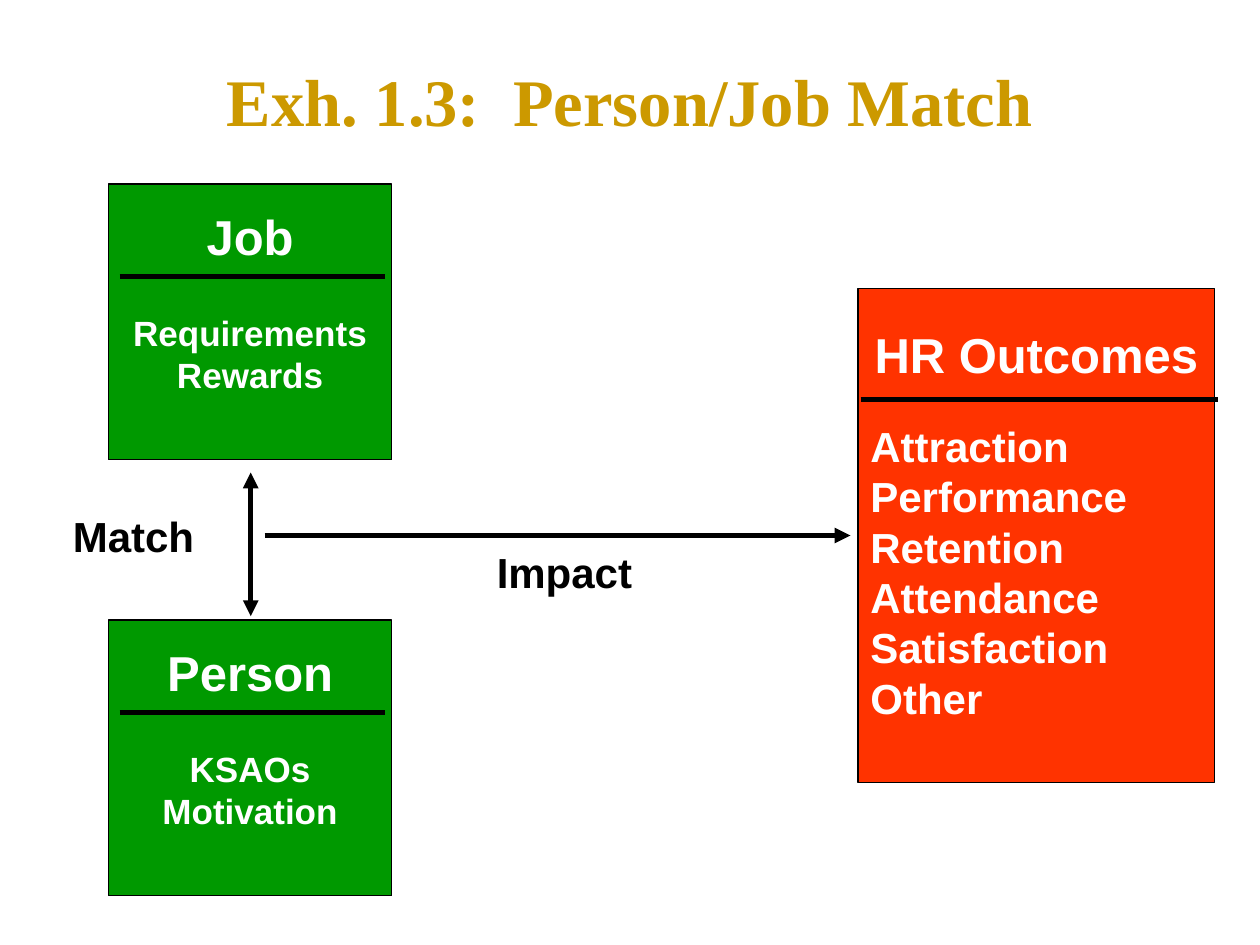
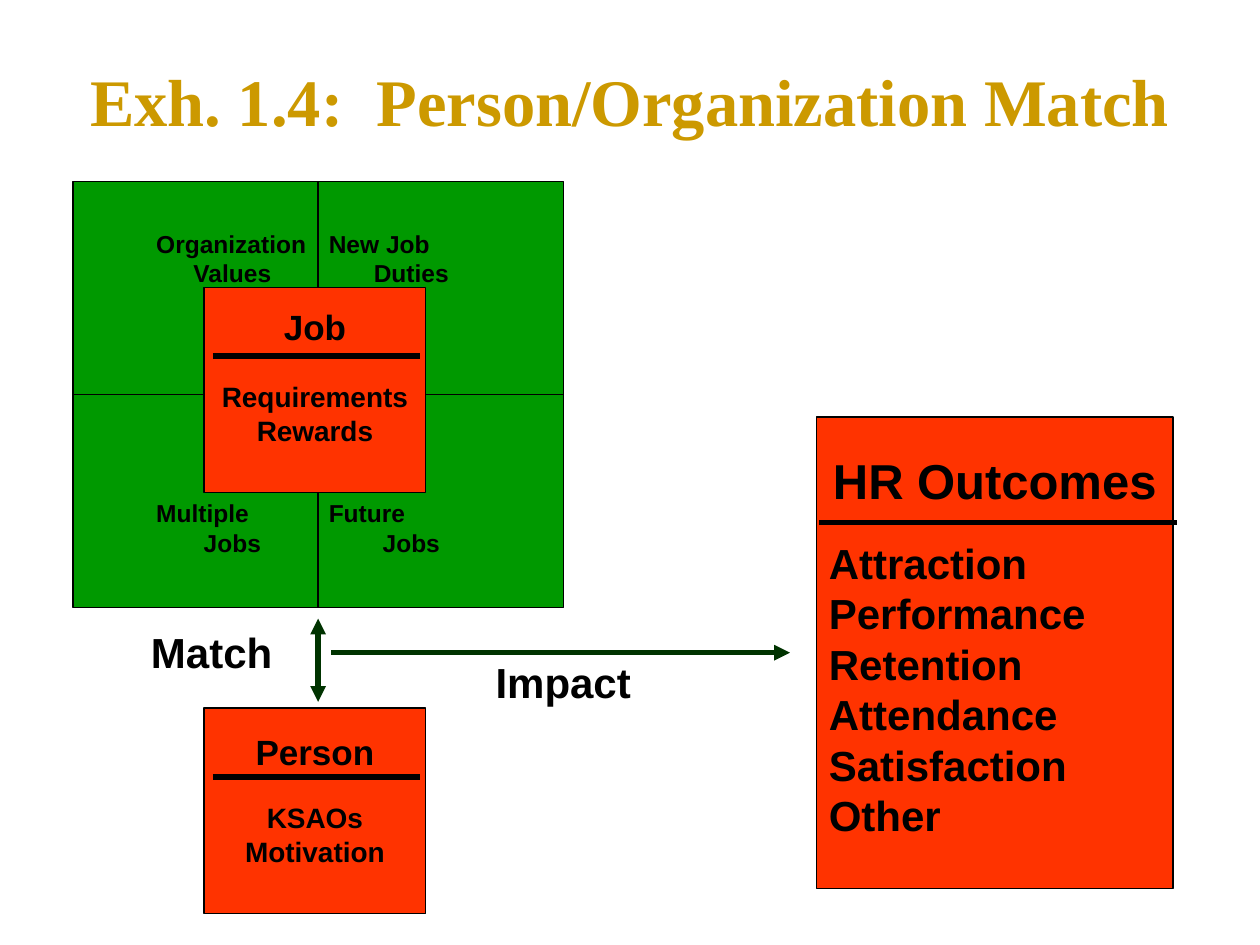
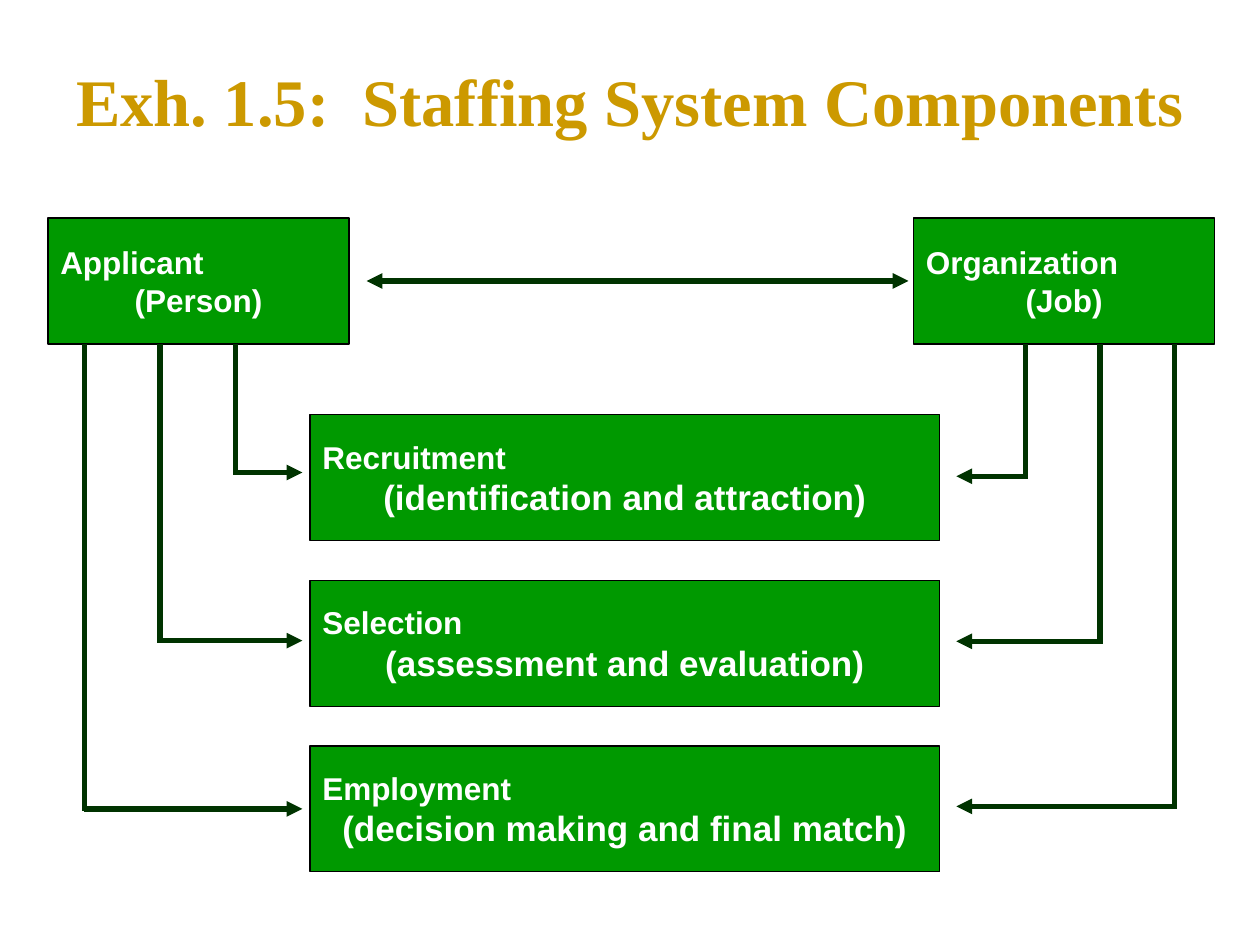
from dataclasses import dataclass

from lxml import etree
from pptx import Presentation
from pptx import util as u
from pptx.dml.color import RGBColor
from pptx.enum import shapes, text
from pptx.oxml import ns

LEFT, CENTER = text.PP_ALIGN.LEFT, text.PP_ALIGN.CENTER
COLUMNS, ROWS = 100, 75


@dataclass(frozen=True)
class Theme:
    gold: str = "CC9900"
    green: str = "009900"
    red: str = "FF3300"
    dark: str = "003300"
    black: str = "000000"
    white: str = "FFFFFF"
    title_font: str = "Times New Roman"
    body_font: str = "Arial"
    title: int = 38
    heading: int = 28
    label: int = 24
    large: int = 20
    normal: int = 18
    medium: int = 16
    small: int = 14
    thin: float = 0.75
    thick: float = 3


def apply(target, values):
    for name, value in values.items():
        setattr(target, name, value)


class Deck:
    """Holds the style and the slide being drawn; lengths are grid columns and rows."""

    def __init__(self, theme):
        self.theme = theme
        self.presentation = Presentation()
        apply(self.presentation, {"slide_width": u.Inches(10), "slide_height": u.Inches(7.5)})
        self.column = self.presentation.slide_width / COLUMNS
        self.row = self.presentation.slide_height / ROWS
        self.slide = None

    def place(self, *lengths):
        units = (self.column, self.row) * 2
        return [round(length * unit) for length, unit in zip(lengths, units)]

    def new_slide(self, title):
        layout = self.presentation.slide_layouts.get_by_name("Title Only")
        self.slide = self.presentation.slides.add_slide(layout)
        shape = self.slide.shapes.title
        apply(shape, dict(zip(("left", "top", "width", "height"), self.place(2.5, 2.5, 95, 10.8))))
        self.set_text(shape, [(title, self.theme.title, CENTER)], self.theme.gold, font=self.theme.title_font)

    def set_text(self, shape, lines, color, font=None, side=0.1, top=0.05):
        """Fill a shape with (text, size, alignment) lines."""
        frame = shape.text_frame
        apply(frame, {
            "word_wrap": True, "auto_size": text.MSO_AUTO_SIZE.NONE,
            "vertical_anchor": text.MSO_ANCHOR.MIDDLE,
            "margin_left": u.Inches(side), "margin_right": u.Inches(side),
            "margin_top": u.Inches(top), "margin_bottom": u.Inches(0.05)})
        for index, (words, size, alignment) in enumerate(lines):
            paragraph = frame.add_paragraph() if index else frame.paragraphs[0]
            paragraph.alignment = alignment
            run = paragraph.add_run()
            run.text = words
            apply(run.font, {"name": font or self.theme.body_font, "size": u.Pt(size), "bold": True})
            run.font.color.rgb = RGBColor.from_string(color)

    def label(self, x, y, width, height, lines, color, side=0.1):
        shape = self.slide.shapes.add_textbox(*self.place(x, y, width, height))
        self.set_text(shape, lines, color, side=side)

    def box(self, x, y, width, height, fill, lines=(), color=None, top=0.05):
        shape = self.slide.shapes.add_shape(
            shapes.MSO_SHAPE.RECTANGLE, *self.place(x, y, width, height))
        shape.shadow.inherit = False
        shape.fill.solid()
        shape.fill.fore_color.rgb = RGBColor.from_string(fill)
        shape.line.color.rgb = RGBColor.from_string(self.theme.black)
        shape.line.width = u.Pt(self.theme.thin)
        self.set_text(shape, lines, color, top=top)

    def line(self, x1, y1, x2, y2, color, width=None, ends=()):
        """Draw a line; ends names the ends (headEnd, tailEnd) that carry an arrowhead."""
        line = self.slide.shapes.add_connector(
            shapes.MSO_CONNECTOR.STRAIGHT, *self.place(x1, y1, x2, y2))
        line.line.color.rgb = RGBColor.from_string(color)
        line.line.width = u.Pt(width or self.theme.thick)
        properties = line._element.spPr
        outline = properties.find(ns.qn("a:ln"))
        for end in ends:
            etree.SubElement(outline, ns.qn(f"a:{end}"), type="triangle")
        etree.SubElement(properties, ns.qn("a:effectLst"))

    def card(self, x, y, width, height, fill, color, heading, lines, sizes, heading_at=0.19):
        """Box with a centred heading, a rule and centred lines below it."""
        heading_size, line_size = sizes
        self.box(x, y, width, height, fill)
        self.label(x, y + heading_at * height - 2.5, width, 5, [(heading, heading_size, CENTER)], color)
        self.label(x, y + 0.615 * height - 4, width, 8,
                   [(words, line_size, CENTER) for words in lines], color)
        rule = y + 0.335 * height
        self.line(x + 0.04 * width, rule, x + 0.975 * width, rule, self.theme.black)

    def outcomes(self, x, y, height, color):
        width = 28.3
        names = ("Attraction", "Performance", "Retention", "Attendance", "Satisfaction", "Other")
        self.box(x, y, width, height, self.theme.red,
                 [(name, self.theme.label, LEFT) for name in names], color, top=0.62)
        self.label(x, y + 0.133 * height - 3, width, 6,
                   [("HR Outcomes", self.theme.heading, CENTER)], color)
        rule = y + 0.224 * height
        self.line(x + 0.2, rule, x + width + 0.3, rule, self.theme.black)

    def relation(self, name, center_x, center_y):
        self.label(center_x - 7, center_y - 2.3, 14, 4.6,
                   [(name, self.theme.label, CENTER)], self.theme.black)


JOB = ("Job", ("Requirements", "Rewards"))
PERSON = ("Person", ("KSAOs", "Motivation"))
BOTH_ENDS = ("headEnd", "tailEnd")


def person_job(deck):
    theme = deck.theme
    deck.new_slide("Exh. 1.3:  Person/Job Match")
    for y, (heading, lines) in ((14.6, JOB), (49.2, PERSON)):
        deck.card(8.6, y, 22.5, 21.9, theme.green, theme.white, heading, lines,
                  (theme.heading, theme.large))
    deck.outcomes(68.1, 22.9, 39.2, theme.white)

    # Match and impact
    deck.line(19.9, 37.5, 19.9, 48.9, theme.black, ends=BOTH_ENDS)
    deck.line(21, 42.5, 67.5, 42.5, theme.black, ends=("tailEnd",))
    deck.relation("Match", 10.6, 42.5)
    deck.relation("Impact", 44.8, 45.4)


def person_organization(deck):
    theme = deck.theme
    deck.new_slide("Exh. 1.4:  Person/Organization Match")

    # Organization quadrants
    x, y, width, height = 5.8, 14.4, 38.9, 33.8
    middle_x, middle_y = x + width / 2, y + height / 2
    deck.box(x, y, width, height, theme.green)
    deck.line(middle_x, y, middle_x, y + height, theme.black, theme.thin)
    deck.line(x, middle_y, x + width, middle_y, theme.black, theme.thin)
    quadrants = ((("Organization", "Values"), ("New Job", "Duties")),
                 (("Multiple", "Jobs"), ("Future", "Jobs")))
    for top, pair in zip((17.8, 39.2), quadrants):
        for (left, label_width), (first, second) in zip(((11.6, 13.7), (25.3, 14.7)), pair):
            deck.label(left, top, label_width, 5.4,
                       [(first, theme.small, LEFT), (second, theme.small, CENTER)],
                       theme.black, side=0.08)

    # Job, person and outcomes
    for card_y, (heading, lines), heading_at in ((22.8, JOB, 0.19), (56.2, PERSON, 0.21)):
        deck.card(16.2, card_y, 17.6, 16.3, theme.red, theme.black, heading, lines,
                  (theme.large, theme.medium), heading_at)
    deck.outcomes(64.8, 33.1, 37.4, theme.black)

    # Match and impact
    deck.line(middle_x, 49.1, middle_x, 55.7, theme.dark, ends=BOTH_ENDS)
    deck.line(26.3, 51.8, 62.7, 51.8, theme.dark, ends=("tailEnd",))
    deck.relation("Match", 16.8, 51.7)
    deck.relation("Impact", 44.7, 54.1)


def staffing_system(deck):
    theme = deck.theme
    deck.new_slide("Exh. 1.5:  Staffing System Components")

    # Parties
    party_y, height = 17.3, 10
    for x, name, role in ((3.8, "Applicant", "(Person)"), (72.5, "Organization", "(Job)")):
        deck.box(x, party_y, 23.9, height, theme.green,
                 [(name, theme.normal, LEFT), (role, theme.normal, CENTER)], theme.white)
    deck.line(29.1, 22.3, 72.1, 22.3, theme.dark, ends=BOTH_ENDS)

    # Stages, each reached from both parties
    stages = (("Recruitment", "(identification and attraction)"),
              ("Selection", "(assessment and evaluation)"),
              ("Employment", "(decision making and final match)"))
    for index, (name, detail) in enumerate(stages):
        stage_y = 32.9 + 13.15 * index
        deck.box(24.6, stage_y, 50, height, theme.green,
                 [(name, theme.normal, LEFT), (detail, theme.large, CENTER)], theme.white)
        left_y, right_y = 37.5 + 13.35 * index, 37.8 + 13.1 * index
        for trunk_x, tip_x, tip_y in ((18.7 - 6 * index, 24, left_y),
                                      (81.4 + 5.9 * index, 75.9, right_y)):
            deck.line(trunk_x, party_y + height, trunk_x, tip_y + 0.2, theme.dark)
            deck.line(trunk_x, tip_y, tip_x, tip_y, theme.dark, ends=("tailEnd",))


def main():
    deck = Deck(Theme())
    for build in (person_job, person_organization, staffing_system):
        build(deck)
    deck.presentation.save("out.pptx")


if __name__ == "__main__":
    main()
